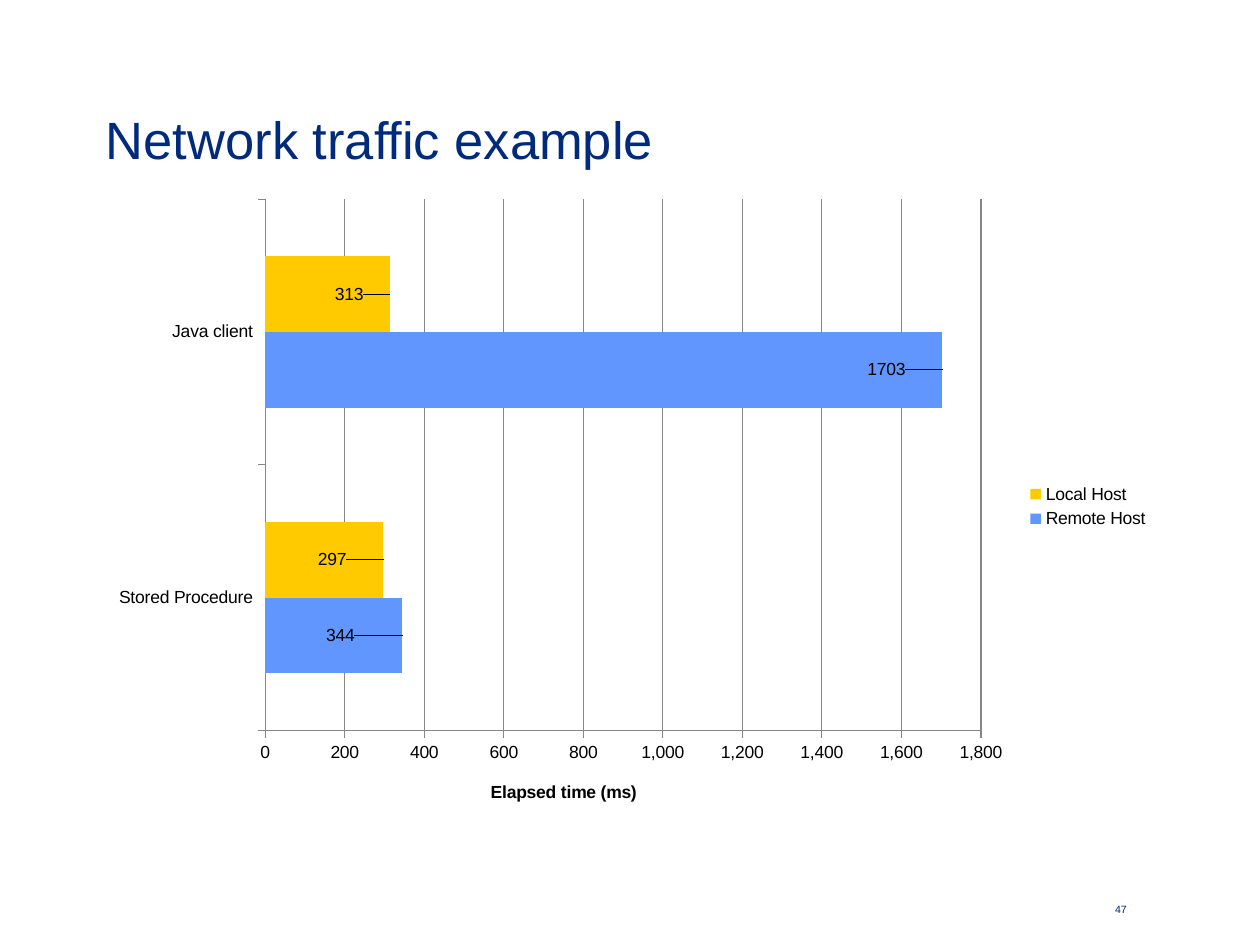
from lxml import etree
from pptx import Presentation
from pptx.chart.data import CategoryChartData
from pptx.dml.color import RGBColor
from pptx.enum.chart import XL_CHART_TYPE, XL_LABEL_POSITION, XL_LEGEND_POSITION, XL_TICK_MARK
from pptx.enum.text import MSO_ANCHOR, PP_ALIGN
from pptx.oxml.ns import qn
from pptx.util import Inches, Pt

BAR_CLUSTERED = XL_CHART_TYPE.BAR_CLUSTERED
INSIDE_END = XL_LABEL_POSITION.INSIDE_END
LEGEND_RIGHT = XL_LEGEND_POSITION.RIGHT
TICK_OUTSIDE = XL_TICK_MARK.OUTSIDE
MIDDLE = MSO_ANCHOR.MIDDLE
LEFT, RIGHT = PP_ALIGN.LEFT, PP_ALIGN.RIGHT

TITLE = "Network traffic example"
PAGE_NUMBER = "47"
AXIS_TITLE = "Elapsed time (ms)"
CLIENTS = ["Stored Procedure", "Java client"]
HOSTS = [
    {"name": "Remote Host", "times": (344, 1703), "color": "remote", "label_shifts": (-0.04, -0.03)},
    {"name": "Local Host", "times": (297, 313), "color": "local", "label_shifts": (-0.03, -0.02)},
]
COLORS = {
    "title": "002B7C",
    "page": "002776",
    "text": "000000",
    "grid": "868686",
    "remote": "6296FF",
    "local": "FFCB00",
}
FONT = "Arial"


def color(name):
    return RGBColor.from_string(COLORS[name])


def style(font, size, color_name, bold=False):
    font.name = FONT
    font.size = Pt(size)
    font.bold = bold
    font.color.rgb = color(color_name)


def fill_text(shape, text, size, color_name, align):
    frame = shape.text_frame
    frame.text = text
    frame.word_wrap = True
    frame.vertical_anchor = MIDDLE
    paragraph = frame.paragraphs[0]
    paragraph.alignment = align
    style(paragraph.runs[0].font, size, color_name)


def set_layout(parent, index, **settings):
    for old in parent.findall(qn("c:layout")):
        parent.remove(old)
    layout = etree.Element(qn("c:layout"))
    manual = etree.SubElement(layout, qn("c:manualLayout"))
    for tag, value in settings.items():
        etree.SubElement(manual, qn(f"c:{tag}")).set("val", str(value))
    parent.insert(index, layout)


def format_axis(axis):
    axis.major_tick_mark = TICK_OUTSIDE
    axis.format.line.color.rgb = color("grid")
    axis.format.line.width = Pt(0.75)
    style(axis.tick_labels.font, 10, "text")


def add_times_chart(slide):
    data = CategoryChartData(number_format="General")
    data.categories = CLIENTS
    for host in HOSTS:
        data.add_series(host["name"], host["times"])
    chart = slide.shapes.add_chart(
        BAR_CLUSTERED, Inches(0.78), Inches(1.48), Inches(8.44), Inches(5.08), data
    ).chart
    style(chart.font, 10, "text")
    chart.has_title = False

    plot = chart.plots[0]
    plot.gap_width = 150
    plot.overlap = 0
    plot.vary_by_categories = False
    for host, series in zip(HOSTS, plot.series):
        series.format.fill.solid()
        series.format.fill.fore_color.rgb = color(host["color"])
        labels = series.data_labels
        labels.show_value = True
        labels.position = INSIDE_END
        style(labels.font, 10, "text")
        for point, _ in enumerate(host["times"]):
            series.points[point].data_label.position = INSIDE_END
    label_shifts = [shift for host in HOSTS for shift in host["label_shifts"]]
    for label, shift in zip(chart.element.iter(qn("c:dLbl")), label_shifts):
        set_layout(label, 1, x=shift, y=0)

    times = chart.value_axis
    for axis in (chart.category_axis, times):
        format_axis(axis)
    times.minimum_scale = 0
    times.maximum_scale = 1800
    times.major_unit = 200
    times.tick_labels.number_format = "#,##0"
    times.tick_labels.number_format_is_linked = False
    times.has_major_gridlines = True
    times.major_gridlines.format.line.color.rgb = color("grid")
    times.major_gridlines.format.line.width = Pt(0.75)
    caption = times.axis_title.text_frame.paragraphs[0]
    caption.text = AXIS_TITLE
    style(caption.runs[0].font, 10, "text", bold=True)

    chart.has_legend = True
    chart.legend.position = LEGEND_RIGHT
    chart.legend.include_in_layout = False
    style(chart.legend.font, 10, "text")

    edge = {"xMode": "edge", "yMode": "edge"}
    plot_area = next(chart.element.iter(qn("c:plotArea")))
    set_layout(plot_area, 0, layoutTarget="inner", **edge, x=0.157, y=0.02, w=0.673, h=0.83)
    axis_caption = next(plot_area.iter(qn("c:title")))
    set_layout(axis_caption, 1, **edge, x=0.366, y=0.923)


def main():
    deck = Presentation()
    deck.slide_width, deck.slide_height = Inches(10), Inches(7.5)
    slide = deck.slides.add_slide(deck.slide_layouts[5])

    title = slide.shapes.title
    title.left, title.top = Inches(0.74), Inches(0.8)
    title.width, title.height = Inches(8.52), Inches(0.6)
    fill_text(title, TITLE, 30, "title", LEFT)

    add_times_chart(slide)

    page = slide.shapes.add_textbox(Inches(8.43), Inches(7.08), Inches(0.61), Inches(0.27))
    fill_text(page, PAGE_NUMBER, 6, "page", RIGHT)

    deck.save("out.pptx")


if __name__ == "__main__":
    main()
